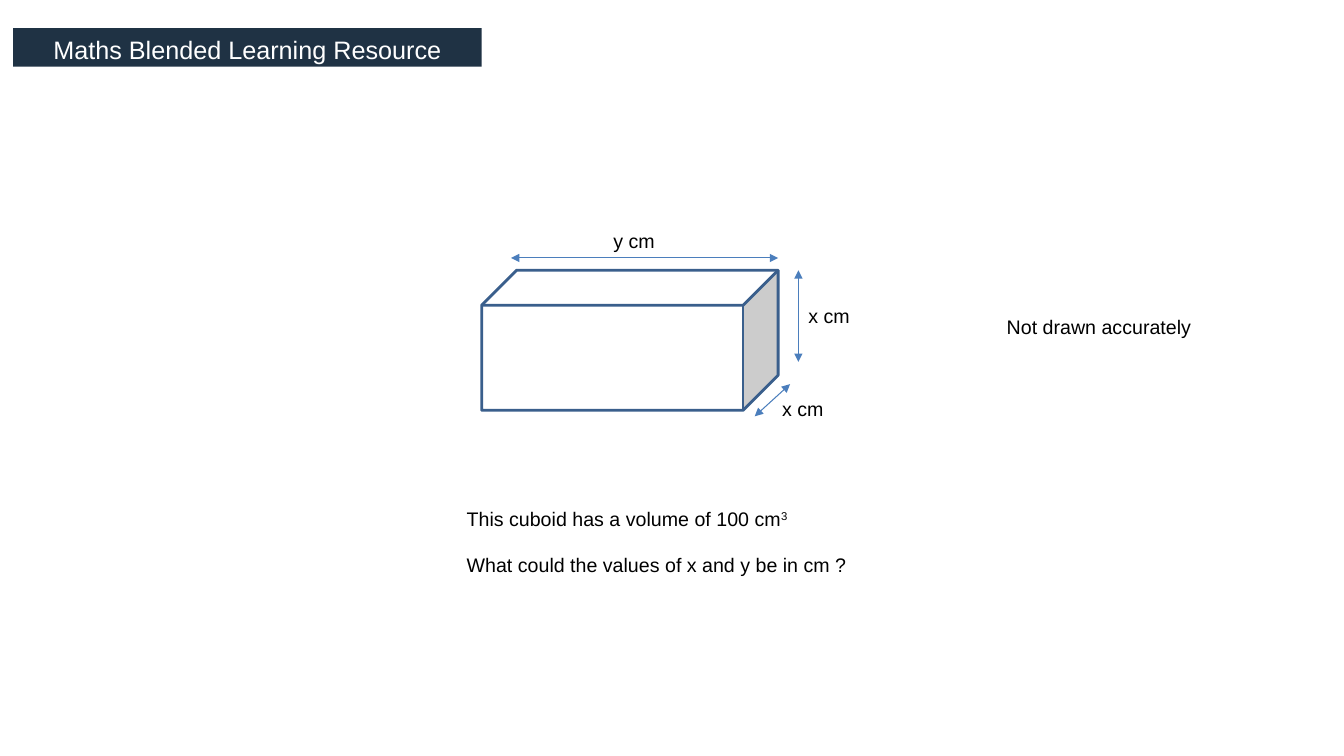
from lxml import etree
from pptx import Presentation
from pptx import util as u
from pptx.dml.color import RGBColor
from pptx.enum import shapes, text
from pptx.oxml.ns import qn

FONT = "Arial"
NAVY, WHITE, BLACK = "1F3244", "FFFFFF", "000000"
OUTLINE, ARROW = "3A5F8C", "4B7EBC"

TITLE = "Maths Blended Learning Resource"
TITLE_BAR = (0.33, 0.71, 11.81, 0.97)
CUBOID = (12.14, 6.81, 7.47, 3.53)
LABELS = [
    ("y cm", 15.21, 5.64, 1.57),
    ("x cm", 20.12, 7.54, 1.57),
    ("x cm", 19.46, 9.88, 1.73),
    ("Not drawn accurately", 25.12, 7.82, 5.18),
]
LABEL_HEIGHT = 0.86
ARROWS = [
    (12.88, 6.5, 19.61, 6.5),
    (20.12, 6.81, 20.12, 9.12),
    (19.02, 10.49, 19.91, 9.68),
]
VOLUME, POWER = "This cuboid has a volume of 100 cm", "3"
QUESTION = "What could the values of x and y be in cm ?"
QUESTION_BOX = (11.51, 12.65, 10.13, 2.06)


def colour(value):
    return RGBColor.from_string(value)


def lengths(values):
    return [u.Cm(value) for value in values]


def set_font(para, size, value):
    para.font.name = FONT
    para.font.size = u.Pt(size)
    para.font.color.rgb = colour(value)


def add_block(page, kind, place, fill):
    block = page.shapes.add_shape(kind, *lengths(place))
    block.shadow.inherit = False
    block.fill.solid()
    block.fill.fore_color.rgb = colour(fill)
    block.line.fill.background()
    return block


def add_text(page, place, content):
    box = page.shapes.add_textbox(*lengths(place))
    box.text_frame.word_wrap = False
    para = box.text_frame.paragraphs[0]
    para.text = content
    set_font(para, 14, BLACK)
    return box


def add_arrow(page, ends):
    arrow = page.shapes.add_connector(shapes.MSO_CONNECTOR.STRAIGHT, *lengths(ends))
    arrow.line.color.rgb = colour(ARROW)
    arrow.line.width = u.Pt(0.75)
    line = arrow.line._get_or_add_ln()
    for end in ("a:headEnd", "a:tailEnd"):
        etree.SubElement(line, qn(end), type="triangle")
    etree.SubElement(arrow._element.spPr, qn("a:effectLst"))


def main():
    deck = Presentation()
    deck.slide_width, deck.slide_height = lengths((33.87, 19.05))
    page = deck.slides.add_slide(deck.slide_layouts[6])

    bar = add_block(page, shapes.MSO_SHAPE.RECTANGLE, TITLE_BAR, NAVY)
    frame = bar.text_frame
    frame.margin_top, frame.margin_bottom = lengths((0.1, 0))
    frame.vertical_anchor = text.MSO_ANCHOR.MIDDLE
    title = frame.paragraphs[0]
    title.text = TITLE
    title.alignment = text.PP_ALIGN.CENTER
    set_font(title, 18, WHITE)

    cuboid = add_block(page, shapes.MSO_SHAPE.CUBE, CUBOID, WHITE)
    cuboid.line.color.rgb = colour(OUTLINE)
    cuboid.line.width = u.Pt(2)

    for content, left, top, width in LABELS:
        add_text(page, (left, top, width, LABEL_HEIGHT), content)
    for ends in ARROWS:
        add_arrow(page, ends)

    box = add_text(page, QUESTION_BOX, VOLUME)
    span = box.text_frame.paragraphs[0].add_run()
    span.text = POWER
    span.font._element.set("baseline", "30000")
    para = box.text_frame.add_paragraph()
    para.text = QUESTION
    para.space_before = u.Pt(16)
    set_font(para, 14, BLACK)

    deck.save("out.pptx")


if __name__ == "__main__":
    main()
